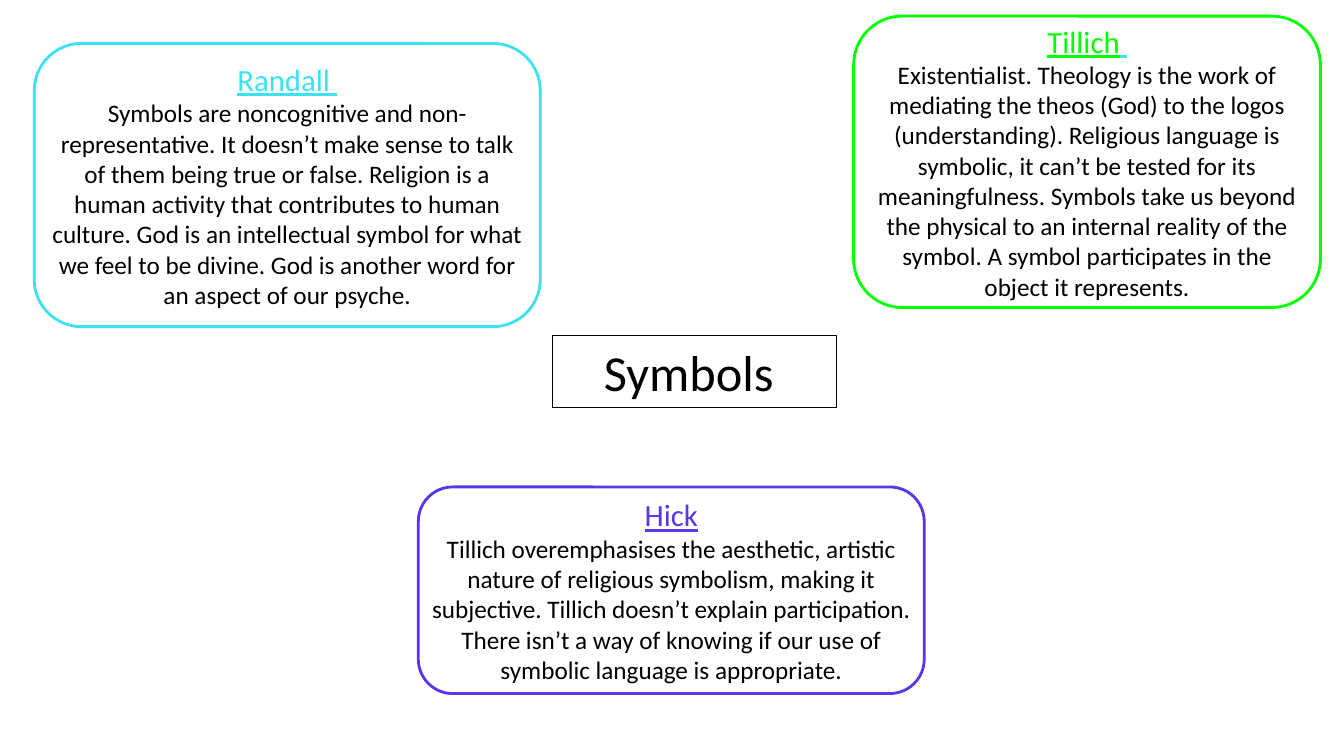
from pptx import Presentation
from pptx.dml.color import RGBColor
from pptx.enum.shapes import MSO_SHAPE
from pptx.enum.text import MSO_ANCHOR, PP_ALIGN
from pptx.util import Pt

RECTANGLE = MSO_SHAPE.RECTANGLE
ROUNDED = MSO_SHAPE.ROUNDED_RECTANGLE
TOP = MSO_ANCHOR.TOP
MIDDLE = MSO_ANCHOR.MIDDLE
CENTER = PP_ALIGN.CENTER

COLORS = {
    "black": "000000",
    "purple": "5937E9",
    "cyan": "3CE1F2",
    "green": "00FF00",
}


def add_span(para, text, *, size, color="black", underline=False):
    span = para.add_run()
    span.text = text
    span.font.name = "Calibri"
    span.font.size = Pt(size)
    span.font.underline = underline
    span.font.color.rgb = RGBColor.from_string(COLORS[color])


def add_box(page, kind, place, *, color, line_width, anchor, insets):
    box = page.shapes.add_shape(kind, *[Pt(length) for length in place])
    box.shadow.inherit = False
    box.fill.background()
    box.line.color.rgb = RGBColor.from_string(COLORS[color])
    box.line.width = Pt(line_width)
    frame = box.text_frame
    frame.word_wrap = True
    frame.vertical_anchor = anchor
    frame.margin_left = frame.margin_right = Pt(insets[0])
    frame.margin_top = frame.margin_bottom = Pt(insets[1])
    frame.paragraphs[0].alignment = CENTER
    return frame


deck = Presentation()
deck.slide_width = Pt(960)
deck.slide_height = Pt(540)
page = deck.slides.add_slide(deck.slide_layouts[6])

title = add_box(page, RECTANGLE, (394.6, 239.8, 203, 51.1),
                color="black", line_width=0.75, anchor=TOP, insets=(7.2, 3.6))
add_span(title.paragraphs[0], "Symbols ", size=36)

thinkers = [
    ((298.8, 347.8, 361.4, 147.6), "purple", [("Hick", "purple")],
     "Tillich overemphasises the aesthetic, artistic nature of religious "
     "symbolism, making it subjective. Tillich doesn’t explain participation. "
     "There isn’t a way of knowing if our use of symbolic language is "
     "appropriate."),
    ((24.5, 31, 361.4, 202.3), "cyan", [("Randall ", "cyan")],
     "Symbols are noncognitive and non-representative. It doesn’t make sense "
     "to talk of them being true or false. Religion is a human activity that "
     "contributes to human culture. God is an intellectual symbol for what we "
     "feel to be divine. God is another word for an aspect of our psyche."),
    ((609.8, 11.5, 333.4, 208.1), "green", [("Tillich", "green"), (" ", "cyan")],
     "Existentialist. Theology is the work of mediating the theos (God) to "
     "the logos (understanding). Religious language is symbolic, it can’t be "
     "tested for its meaningfulness. Symbols take us beyond the physical to "
     "an internal reality of the symbol. A symbol participates in the object "
     "it represents."),
]

for place, color, name_spans, summary in thinkers:
    frame = add_box(page, ROUNDED, place, color=color, line_width=2,
                    anchor=MIDDLE, insets=(0, 0))
    for text, span_color in name_spans:
        add_span(frame.paragraphs[0], text, size=22, color=span_color,
                 underline=True)
    para = frame.add_paragraph()
    para.alignment = CENTER
    add_span(para, summary, size=18)

deck.save("out.pptx")
